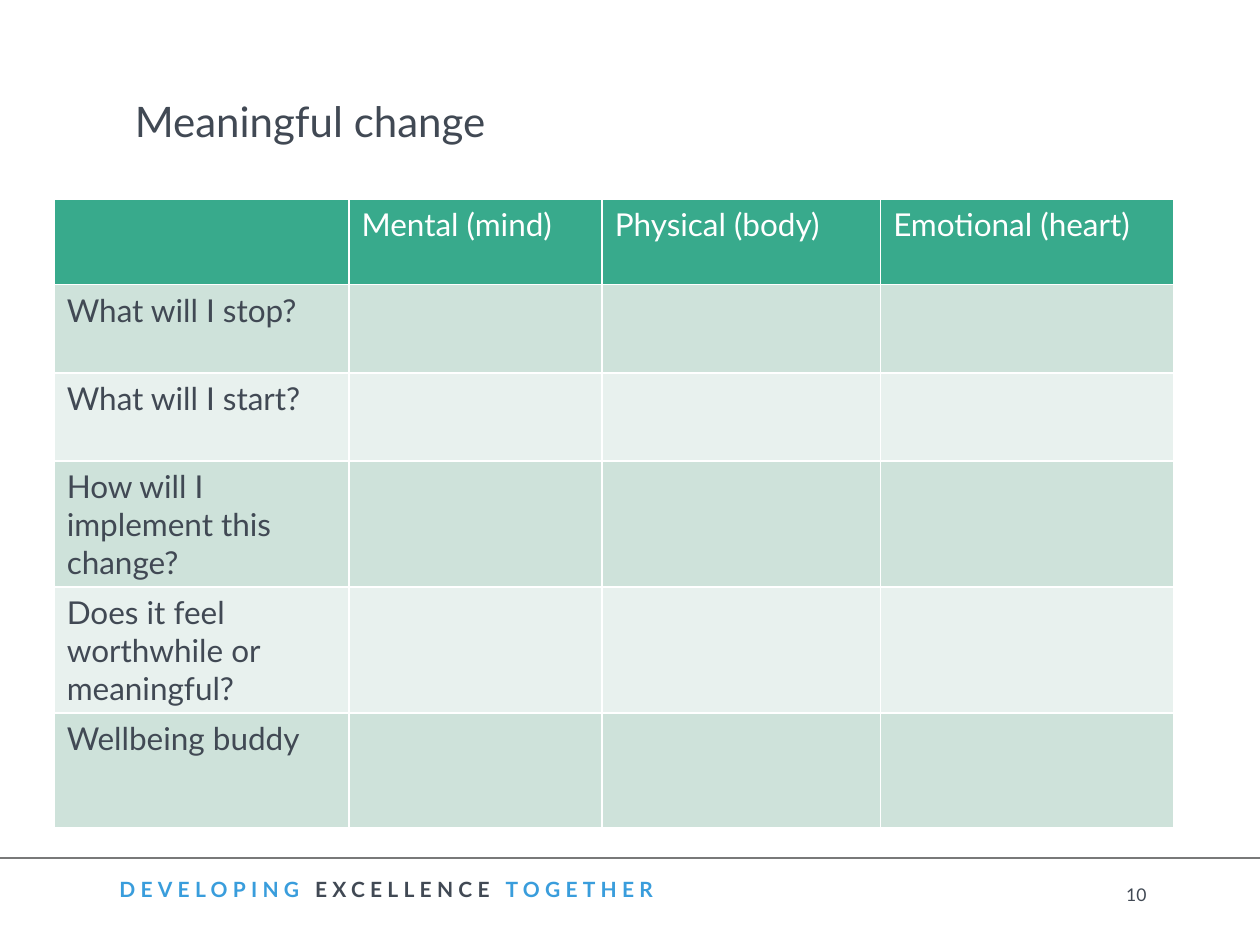
from lxml.etree import SubElement
from pptx import Presentation
from pptx.dml.color import RGBColor
from pptx.enum.shapes import MSO_CONNECTOR
from pptx.enum.text import MSO_ANCHOR, PP_ALIGN
from pptx.oxml.ns import qn
from pptx.util import Inches, Pt

COLORS = {
    "text": "414954",
    "white": "FFFFFF",
    "header": "38AA8C",
    "odd row": "CEE2DA",
    "even row": "E8F1EE",
    "motto": "399DDC",
    "rule": "787979",
}


def color(name):
    return RGBColor.from_string(COLORS[name])


def set_font(font, size, color_name, bold=False):
    font.name = "Lato"
    font.size = Pt(size)
    font.bold = bold
    font.color.rgb = color(color_name)


presentation = Presentation()
presentation.slide_width = Inches(10)
presentation.slide_height = Inches(7.5)
slide = presentation.slides.add_slide(presentation.slide_layouts[5])

# Footer rule
rule = slide.shapes.add_connector(
    MSO_CONNECTOR.STRAIGHT, Inches(0), Inches(6.81), Inches(10), Inches(6.81)
)
rule.line.color.rgb = color("rule")
rule.line.width = Pt(0.75)
SubElement(rule._element.spPr, qn("a:effectLst"))

# Footer motto, with letters spaced 3 points apart
motto = slide.shapes.add_textbox(Inches(0.85), Inches(6.91), Inches(5.44), Inches(0.44))
motto.text_frame.word_wrap = False
paragraph = motto.text_frame.paragraphs[0]
for text, color_name in [
    ("DEVELOPING", "motto"),
    (" EXCELLENCE ", "text"),
    ("TOGETHER", "motto"),
]:
    run = paragraph.add_run()
    run.text = text
    set_font(run.font, 12, color_name, bold=True)
    run.font._element.set("spc", "300")

# Page number
page_number = slide.shapes.add_textbox(Inches(8.84), Inches(6.97), Inches(0.4), Inches(0.27))
page_number.text_frame.word_wrap = True
paragraph = page_number.text_frame.paragraphs[0]
paragraph.text = "10"
set_font(paragraph.font, 10, "text")

# Title
title = slide.shapes.title
title.left, title.top = Inches(0.97), Inches(0.71)
title.width, title.height = Inches(6.39), Inches(0.5)
title.text_frame.vertical_anchor = MSO_ANCHOR.TOP
paragraph = title.text_frame.paragraphs[0]
paragraph.text = "Meaningful change"
paragraph.alignment = PP_ALIGN.LEFT
set_font(paragraph.font, 24, "text")

# Table: questions down the side, areas of change across the top
column_widths = [2.34, 2.01, 2.21, 2.33]
row_heights = [0.68, 0.7, 0.7, 1, 1, 0.91]
headings = ["", "Mental (mind)", "Physical (body)", "Emotional (heart)"]
questions = [
    "What will I stop?",
    "What will I start?",
    "How will I implement this change?",
    "Does it feel worthwhile or meaningful?",
    "Wellbeing buddy",
]
rows = [headings] + [[question, "", "", ""] for question in questions]

table = slide.shapes.add_table(
    len(rows), len(headings), Inches(0.43), Inches(1.58),
    Inches(sum(column_widths)), Inches(sum(row_heights)),
).table
for column, width in zip(table.columns, column_widths):
    column.width = Inches(width)

for row_index, texts in enumerate(rows):
    table.rows[row_index].height = Inches(row_heights[row_index])
    if row_index == 0:
        fill_name, text_name = "header", "white"
    else:
        fill_name, text_name = ("odd row" if row_index % 2 else "even row"), "text"
    for column_index, text in enumerate(texts):
        cell = table.cell(row_index, column_index)
        cell.fill.solid()
        cell.fill.fore_color.rgb = color(fill_name)
        paragraph = cell.text_frame.paragraphs[0]
        if text:
            paragraph.text = text
        set_font(paragraph.font, 18, text_name)

presentation.save("out.pptx")
